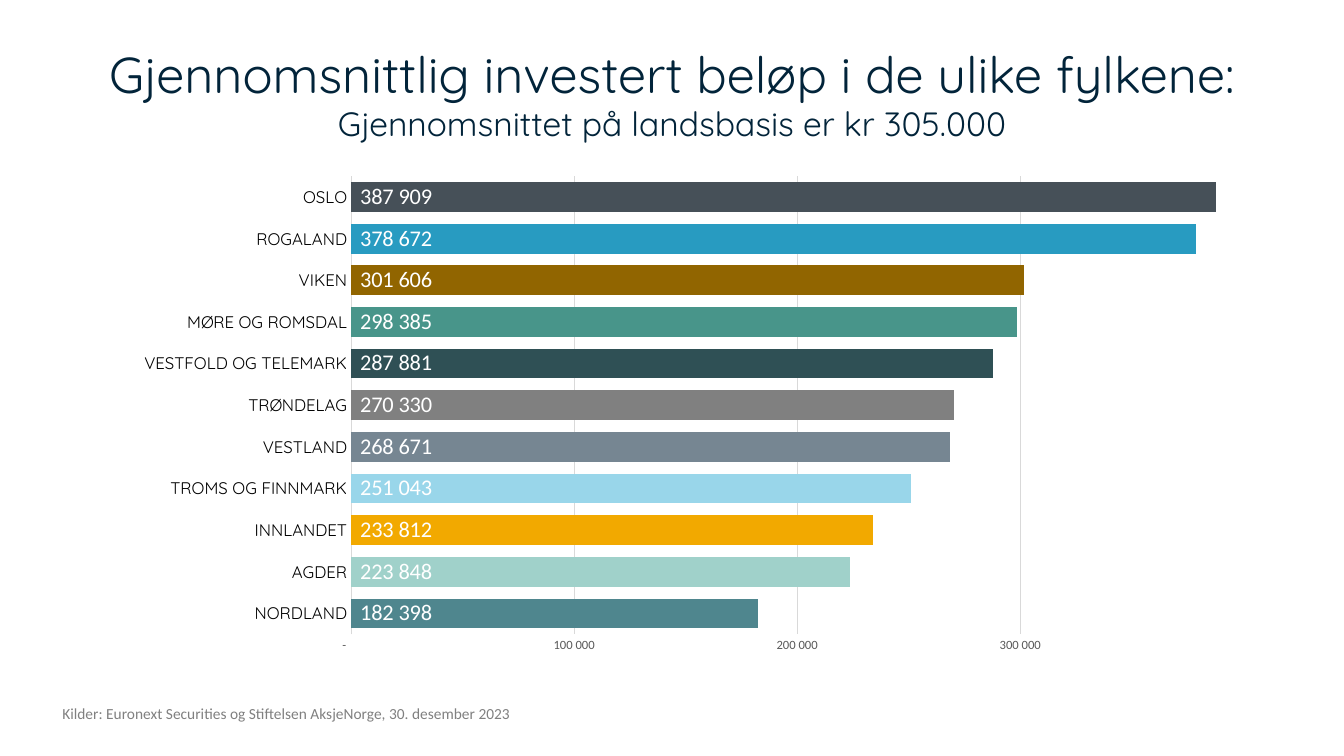
from dataclasses import dataclass

import pptx
import pptx.chart.data
import pptx.dml.color
import pptx.enum.chart
import pptx.enum.text
import pptx.oxml
import pptx.oxml.ns
import pptx.util

Pt = pptx.util.Pt

COLORS = {
    "navy": "02243A", "black": "000000", "white": "FFFFFF",
    "gray": "808080", "axis": "595959", "grid": "D9D9D9",
    "teal": "4F868E", "mint": "A0D1CA", "amber": "F2A900",
    "sky": "99D6EA", "slate": "768692", "pine": "2F5055",
    "green": "48958A", "brown": "916500", "blue": "289BC1",
    "charcoal": "465058",
}
NUMBER_FORMAT = r'_-* #\ ##0_-;\-* #\ ##0_-;_-* "-"??_-;_-'


@dataclass
class County:
    name: str
    amount: int
    color: str


@dataclass
class Line:
    text: str
    size: float
    font: str
    color: str


@dataclass
class Box:
    left: float
    top: float
    width: float
    height: float

    def lengths(self) -> tuple:
        return Pt(self.left), Pt(self.top), Pt(self.width), Pt(self.height)


# Bars run from the bottom of the chart upwards
COUNTIES = [
    County("NORDLAND", 182398, "teal"),
    County("AGDER", 223848, "mint"),
    County("INNLANDET", 233812, "amber"),
    County("TROMS OG FINNMARK", 251043, "sky"),
    County("VESTLAND", 268671, "slate"),
    County("TRØNDELAG", 270330, "gray"),
    County("VESTFOLD OG TELEMARK", 287881, "pine"),
    County("MØRE OG ROMSDAL", 298385, "green"),
    County("VIKEN", 301606, "brown"),
    County("ROGALAND", 378672, "blue"),
    County("OSLO", 387909, "charcoal"),
]
HEADING = [
    Line("Gjennomsnittlig investert beløp i de ulike fylkene:", 36, "Quicksand", "navy"),
    Line("Gjennomsnittet på landsbasis er kr 305.000", 24, "Quicksand", "navy"),
]
SOURCES = [
    Line("Kilder: Euronext Securities og Stiftelsen AksjeNorge, 30. desember 2023",
         11, "Calibri", "gray"),
]


def rgb(color: str) -> pptx.dml.color.RGBColor:
    return pptx.dml.color.RGBColor.from_string(COLORS[color])


def style_font(font, name: str, size: float, color: str) -> None:
    font.name = name
    font.size = Pt(size)
    font.color.rgb = rgb(color)


def style_line(line_format, color: str) -> None:
    line_format.color.rgb = rgb(color)
    line_format.width = Pt(0.75)


def add_text(slide, box: Box, lines: list[Line], align, anchor) -> None:
    frame = slide.shapes.add_textbox(*box.lengths()).text_frame
    frame.word_wrap = True
    frame.vertical_anchor = anchor
    paragraph = frame.paragraphs[0]
    paragraph.alignment = align
    for index, line in enumerate(lines):
        if index:
            paragraph.add_line_break()
        run = paragraph.add_run()
        run.text = line.text
        style_font(run.font, line.font, line.size, line.color)


def set_plot_area(chart, x: float, y: float, w: float, h: float) -> None:
    plot_area = chart._chartSpace.chart.plotArea
    for layout in plot_area.findall(pptx.oxml.ns.qn("c:layout")):
        plot_area.remove(layout)
    sizes = "".join(f'<c:{key} val="{value}"/>'
                    for key, value in zip("xywh", (x, y, w, h)))
    plot_area.insert(0, pptx.oxml.parse_xml(
        f'<c:layout {pptx.oxml.ns.nsdecls("c")}><c:manualLayout>'
        '<c:layoutTarget val="inner"/><c:xMode val="edge"/><c:yMode val="edge"/>'
        f'{sizes}</c:manualLayout></c:layout>'))


def add_county_chart(slide, box: Box, counties: list[County]) -> None:
    amounts = pptx.chart.data.CategoryChartData(number_format=NUMBER_FORMAT)
    amounts.categories = [county.name for county in counties]
    amounts.add_series("Series 1", [county.amount for county in counties])
    chart = slide.shapes.add_chart(
        pptx.enum.chart.XL_CHART_TYPE.BAR_CLUSTERED, *box.lengths(), amounts).chart
    chart.has_legend = False
    chart.has_title = False
    style_font(chart.font, "Calibri", 10, "black")
    set_plot_area(chart, 0.2, 0.02, 0.78, 0.92)

    # Axes
    no_tick = pptx.enum.chart.XL_TICK_MARK.NONE
    county_axis, amount_axis = chart.category_axis, chart.value_axis
    for axis in (county_axis, amount_axis):
        axis.major_tick_mark = axis.minor_tick_mark = no_tick
    style_font(county_axis.tick_labels.font, "Quicksand", 12, "black")
    style_line(county_axis.format.line, "grid")
    style_font(amount_axis.tick_labels.font, "Calibri", 9, "axis")
    amount_axis.tick_labels.number_format = NUMBER_FORMAT
    amount_axis.tick_labels.number_format_is_linked = False
    amount_axis.minimum_scale, amount_axis.maximum_scale = 0, 399000
    amount_axis.major_unit = 100000
    amount_axis.format.line.fill.background()
    amount_axis.has_major_gridlines = True
    style_line(amount_axis.major_gridlines.format.line, "grid")

    # Bars and their amounts
    plot = chart.plots[0]
    plot.gap_width = 40
    plot.vary_by_categories = False
    bars = plot.series[0]
    for index, county in enumerate(counties):
        fill = bars.points[index].format.fill
        fill.solid()
        fill.fore_color.rgb = rgb(county.color)
    labels = bars.data_labels
    labels.show_value = True
    labels.position = pptx.enum.chart.XL_LABEL_POSITION.INSIDE_BASE
    labels.number_format = NUMBER_FORMAT
    labels.number_format_is_linked = False
    style_font(labels.font, "Calibri", 16, "white")


def main() -> None:
    deck = pptx.Presentation()
    deck.slide_width, deck.slide_height = Pt(960), Pt(540)
    slide = deck.slides.add_slide(deck.slide_layouts[6])
    align, anchor = pptx.enum.text.PP_ALIGN, pptx.enum.text.MSO_ANCHOR
    add_text(slide, Box(48, 21.6, 864, 90), HEADING, align.CENTER, anchor.MIDDLE)
    add_county_chart(slide, Box(87.84, 118.8, 815, 355.7), COUNTIES)
    add_text(slide, Box(37.44, 499.7, 348.5, 20.9), SOURCES, align.LEFT, anchor.TOP)
    deck.save("out.pptx")


if __name__ == "__main__":
    main()
